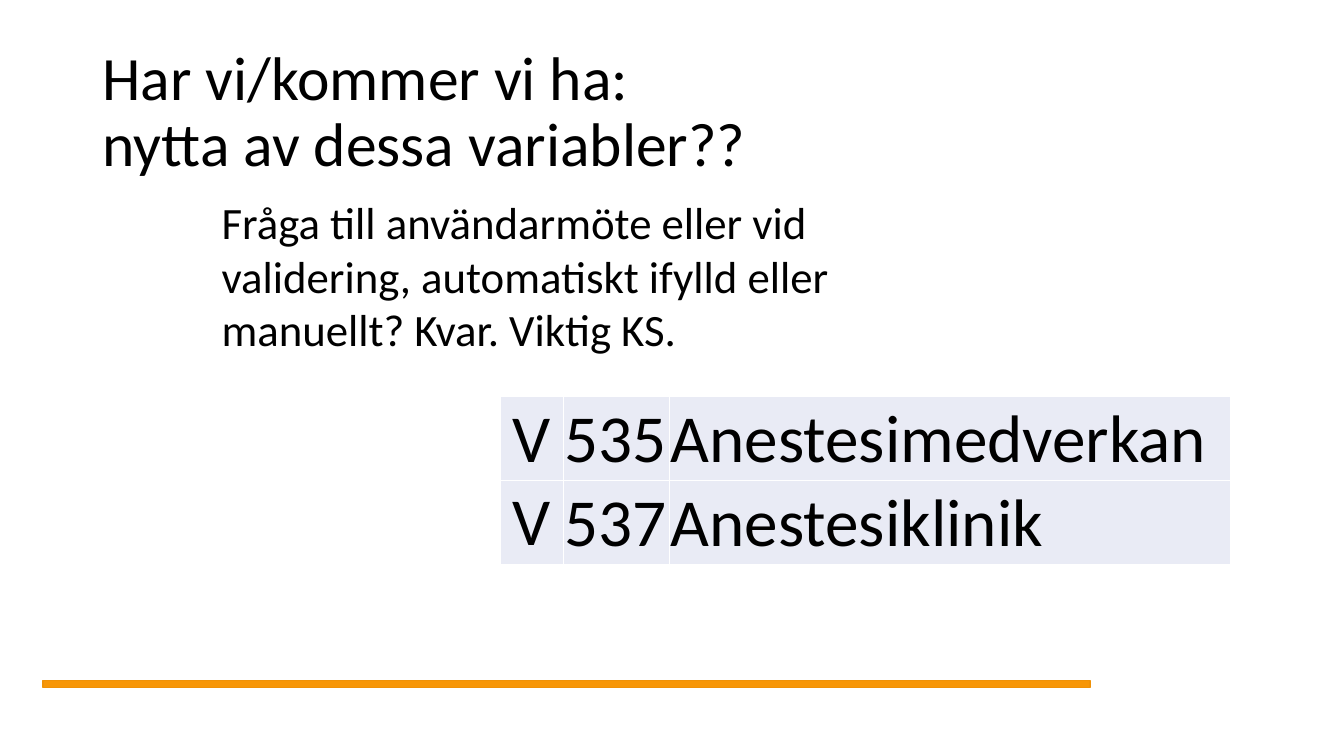
from lxml import etree
from pptx import Presentation
from pptx.dml.color import RGBColor
from pptx.enum.shapes import MSO_SHAPE as Shape
from pptx.enum.text import MSO_ANCHOR as Anchor, MSO_AUTO_SIZE as AutoSize, PP_ALIGN as Align
from pptx.oxml import parse_xml
from pptx.oxml.ns import nsdecls
from pptx.util import Pt


def color(hex_string):
    return RGBColor.from_string(hex_string)


def add_text(paragraph, text, size):
    run = paragraph.add_run()
    run.text = text
    run.font.name = "Calibri"
    run.font.size = Pt(size)
    run.font.color.rgb = color("000000")


presentation = Presentation()
presentation.slide_width = Pt(960)
presentation.slide_height = Pt(540)
slide = presentation.slides.add_slide(presentation.slide_layouts[5])

# Orange rule at the bottom
rule = slide.shapes.add_shape(Shape.RECTANGLE, Pt(30.75), Pt(486), Pt(748), Pt(5))
rule.shadow.inherit = False
rule.fill.solid()
rule.fill.fore_color.rgb = color("F79607")
rule.line.color.rgb = color("EF9107")
rule.line.width = Pt(1)

# Title
title = slide.shapes.title
title.left, title.top, title.width, title.height = Pt(66), Pt(28.75), Pt(828), Pt(104.4)
title.text_frame.auto_size = AutoSize.NONE
title.text_frame.vertical_anchor = Anchor.MIDDLE
paragraph = title.text_frame.paragraphs[0]
paragraph.alignment = Align.LEFT
paragraph.line_spacing = 0.9
add_text(paragraph, "Har vi/kommer vi ha:", 44)
paragraph.add_line_break()
add_text(paragraph, "nytta av dessa variabler??", 44)

# Table of variables
variables = [("V", "535", "Anestesimedverkan"), ("V", "537", "Anestesiklinik")]
column_widths = [45.4, 75.8, 400.3]
row_height = 60
table = slide.shapes.add_table(
    len(variables), len(column_widths), Pt(357.2), Pt(283.2),
    Pt(sum(column_widths)), Pt(row_height * len(variables))).table
table.first_row = False
table.horz_banding = False
for column, width in zip(table.columns, column_widths):
    column.width = Pt(width)
for row, texts in zip(table.rows, variables):
    row.height = Pt(row_height)
    for index, (cell, text) in enumerate(zip(row.cells, texts)):
        cell.margin_left = cell.margin_right = cell.margin_top = Pt(0.75)
        cell.margin_bottom = Pt(0)
        cell.vertical_anchor = Anchor.BOTTOM if index else Anchor.MIDDLE
        paragraph = cell.text_frame.paragraphs[0]
        paragraph.alignment = Align.LEFT if index else Align.CENTER
        add_text(paragraph, text, 48)
        cell.fill.solid()
        cell.fill.fore_color.rgb = color("E9EBF5")
        # Borders come before the fill in the cell properties
        properties = cell._tc.get_or_add_tcPr()
        for position, side in enumerate(("lnL", "lnR", "lnT", "lnB")):
            border = parse_xml(f'<a:{side} {nsdecls("a")} w="{Pt(1)}"/>')
            fill = etree.SubElement(border, border.tag.replace(side, "solidFill"))
            etree.SubElement(fill, border.tag.replace(side, "srgbClr"), val="FFFFFF")
            properties.insert(position, border)

# Question
question = slide.shapes.add_textbox(Pt(151.2), Pt(135.4), Pt(480), Pt(124))
question.text_frame.word_wrap = True
question.text_frame.auto_size = AutoSize.SHAPE_TO_FIT_TEXT
add_text(
    question.text_frame.paragraphs[0],
    "Fråga till användarmöte eller vid validering, automatiskt ifylld eller "
    "manuellt? Kvar. Viktig KS.", 32)

presentation.save("out.pptx")
